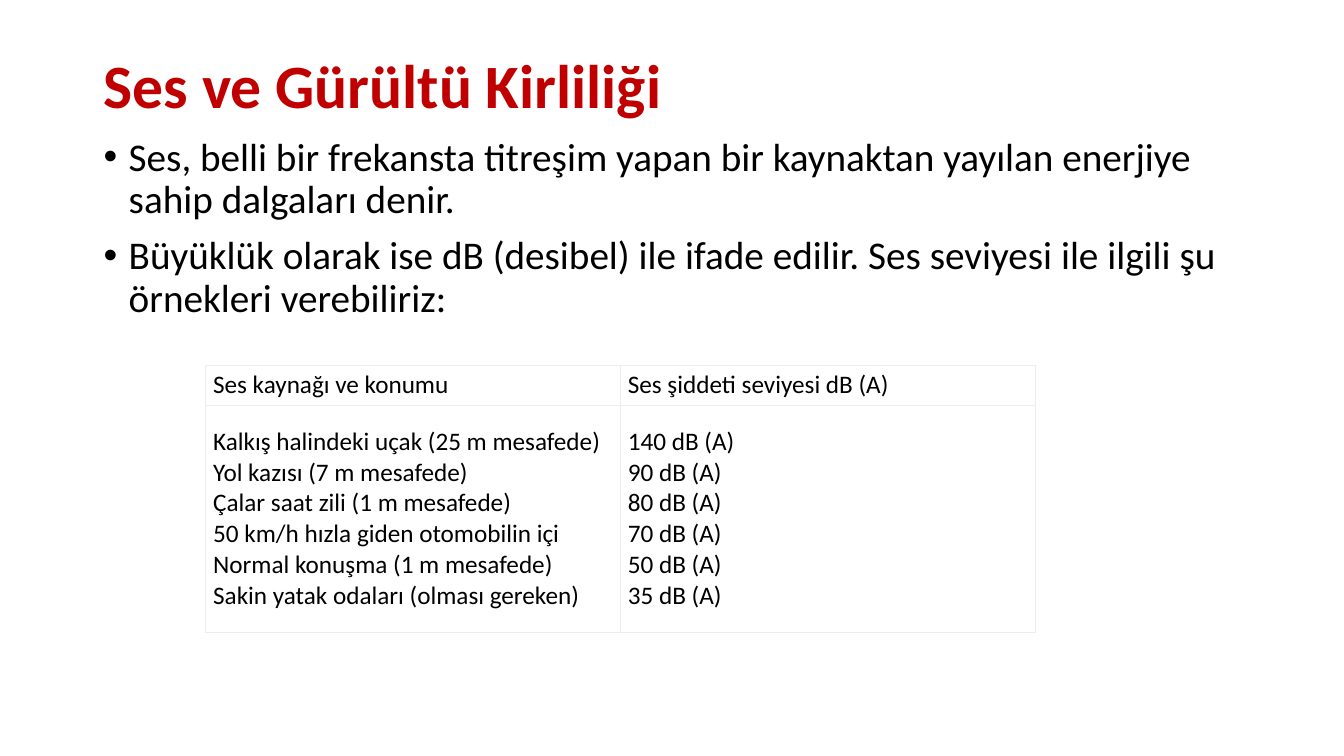
from dataclasses import dataclass

from lxml.etree import SubElement
from pptx import Presentation
from pptx.dml.color import RGBColor
from pptx.enum.text import MSO_ANCHOR, MSO_AUTO_SIZE, PP_ALIGN
from pptx.oxml.ns import qn
from pptx.util import Emu, Pt

PX = 9525  # EMU in one px, 96 px to the inch
COLORS = {"title": "C00000", "text": "000000", "border": "EDEDED", "paper": "FFFFFF"}
BORDER_WIDTH = Pt(0.6)
INDENT = 24
CELL_MARGINS = {"margin_left": 7, "margin_right": 7, "margin_top": 2, "margin_bottom": 2}
TITLE = "Ses ve Gürültü Kirliliği"
POINTS = [
    "Ses, belli bir frekansta titreşim yapan bir kaynaktan yayılan enerjiye sahip dalgaları denir.",
    "Büyüklük olarak ise dB (desibel) ile ifade edilir. Ses seviyesi ile ilgili şu örnekleri verebiliriz:",
]
HEADINGS = ("Ses kaynağı ve konumu", "Ses şiddeti seviyesi dB (A)")


@dataclass(frozen=True)
class Area:
    left: int
    top: int
    width: int
    height: int

    def emu(self) -> list[Emu]:
        return [px(n) for n in (self.left, self.top, self.width, self.height)]


@dataclass(frozen=True)
class Sound:
    source: str
    decibels: int


TITLE_AREA = Area(89, 48, 1103, 78)
BODY_AREA = Area(89, 126, 1103, 216)
TABLE_AREA = Area(196, 348, 790, 254)
HEADING_HEIGHT = 38
SOUNDS = [
    Sound("Kalkış halindeki uçak (25 m mesafede)", 140),
    Sound("Yol kazısı (7 m mesafede)", 90),
    Sound("Çalar saat zili (1 m mesafede)", 80),
    Sound("50 km/h hızla giden otomobilin içi", 70),
    Sound("Normal konuşma (1 m mesafede)", 50),
    Sound("Sakin yatak odaları (olması gereken)", 35),
]


def px(count: int) -> Emu:
    return Emu(count * PX)


def set_all(target, values: dict) -> None:
    for name, value in values.items():
        setattr(target, name, value)


def style_font(para, size: int, color: str, bold: bool = False) -> None:
    for span in para.runs:
        set_all(span.font, {"name": "Calibri", "size": Pt(size), "bold": bold})
        span.font.color.rgb = RGBColor.from_string(COLORS[color])


def place(box, area: Area) -> None:
    """Move a placeholder and let its text start at the top left."""
    box.left, box.top, box.width, box.height = area.emu()
    set_all(box.text_frame, {
        "word_wrap": True,
        "auto_size": MSO_AUTO_SIZE.NONE,
        "vertical_anchor": MSO_ANCHOR.TOP,
    })


def fill_title(box) -> None:
    place(box, TITLE_AREA)
    para = box.text_frame.paragraphs[0]
    para.text = TITLE
    set_all(para, {"alignment": PP_ALIGN.LEFT, "line_spacing": 0.9, "space_before": Pt(0)})
    style_font(para, 44, "title", bold=True)


def fill_body(box) -> None:
    place(box, BODY_AREA)
    box.text_frame.text = "\n".join(POINTS)
    for index, para in enumerate(box.text_frame.paragraphs):
        properties = para._p.get_or_add_pPr()
        properties.set("marL", str(px(INDENT)))
        properties.set("indent", str(px(-INDENT)))
        SubElement(properties, qn("a:buFont"), typeface="Arial")
        SubElement(properties, qn("a:buChar"), char="•")
        set_all(para, {"line_spacing": 0.9, "space_before": Pt(10 if index else 0)})
        style_font(para, 28, "text")


def draw_borders(cell) -> None:
    properties = cell._tc.get_or_add_tcPr()
    for side in ("a:lnL", "a:lnR", "a:lnT", "a:lnB"):
        line = SubElement(properties, qn(side), w=str(BORDER_WIDTH))
        fill = SubElement(line, qn("a:solidFill"))
        SubElement(fill, qn("a:srgbClr"), val=COLORS["border"])


def fill_cell(cell, text: str) -> None:
    para = cell.text_frame.paragraphs[0]
    para.text = text
    style_font(para, 18, "text")
    set_all(cell, {name: px(value) for name, value in CELL_MARGINS.items()})
    cell.vertical_anchor = MSO_ANCHOR.MIDDLE
    draw_borders(cell)
    cell.fill.solid()
    cell.fill.fore_color.rgb = RGBColor.from_string(COLORS["paper"])


def add_sound_table(page) -> None:
    levels = (
        "\v".join(sound.source for sound in SOUNDS),
        "\v".join(f"{sound.decibels} dB (A)" for sound in SOUNDS),
    )
    table = page.shapes.add_table(2, 2, *TABLE_AREA.emu()).table
    set_all(table, {"first_row": False, "horz_banding": False})
    table.rows[0].height = px(HEADING_HEIGHT)
    table.rows[1].height = px(TABLE_AREA.height - HEADING_HEIGHT)
    for row, texts in enumerate((HEADINGS, levels)):
        for column, text in enumerate(texts):
            fill_cell(table.cell(row, column), text)


def main() -> None:
    deck = Presentation()
    set_all(deck, {"slide_width": px(1280), "slide_height": px(720)})
    page = deck.slides.add_slide(deck.slide_layouts[1])
    fill_title(page.shapes.title)
    fill_body(page.placeholders[1])
    add_sound_table(page)
    deck.save("out.pptx")


if __name__ == "__main__":
    main()
